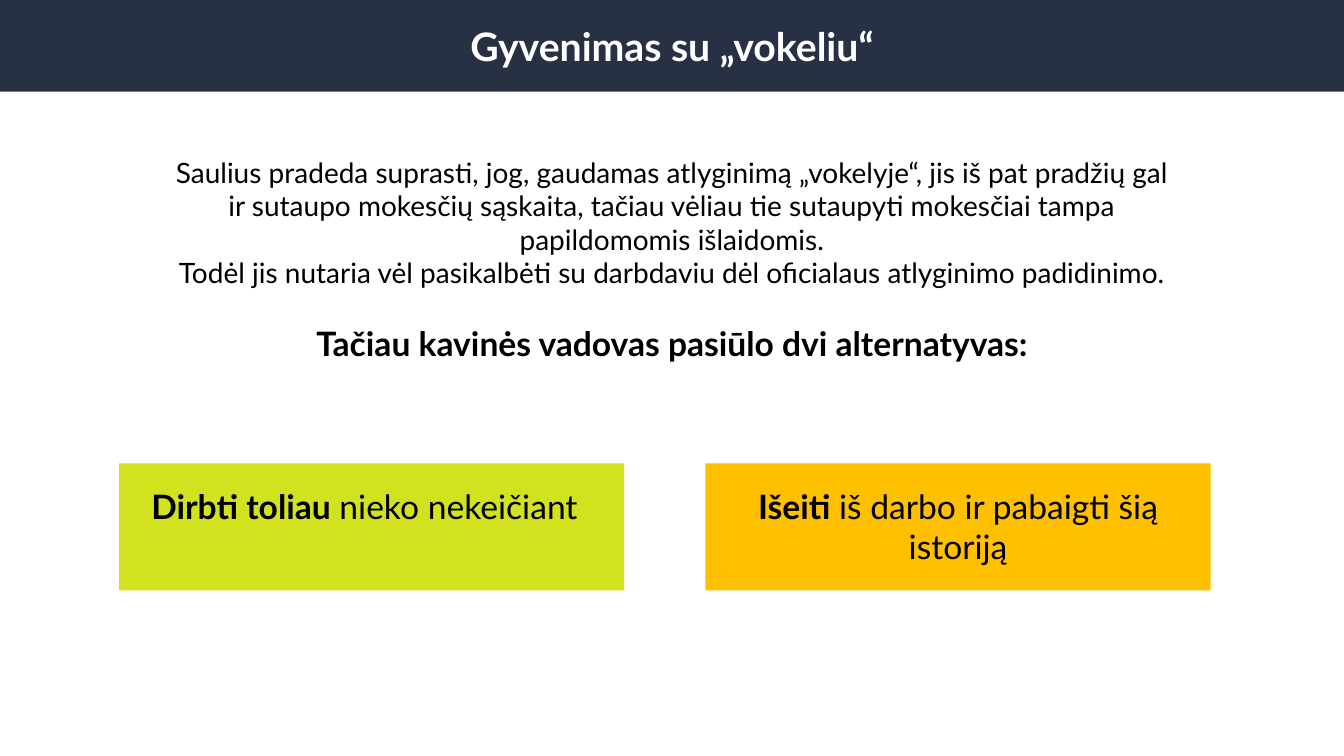
from pptx import Presentation
from pptx.dml.color import RGBColor
from pptx.enum import shapes, text
from pptx.oxml.ns import qn
from pptx.util import Cm, Pt

FONT = "Lato"
COLORS = {
    "band": "283044", "title": "FFFFFF", "text": "000000",
    "stay": "D2E21F", "leave": "FFC000",
}

TITLE = "Gyvenimas su „vokeliu“"
# text, size, bold, space before
STORY = [
    ("Saulius pradeda suprasti, jog, gaudamas atlyginimą „vokelyje“, "
     "jis iš pat pradžių gal ir sutaupo mokesčių sąskaita, tačiau vėliau "
     "tie sutaupyti mokesčiai tampa papildomomis išlaidomis.", 20, False, 0),
    ("Todėl jis nutaria vėl pasikalbėti su darbdaviu dėl oficialaus "
     "atlyginimo padidinimo.", 20, False, 0),
    ("Tačiau kavinės vadovas pasiūlo dvi alternatyvas:", 24, True, 24),
]
# colour, bold part, plain part, left and right margin in cm
OPTIONS = [
    ("stay", "Dirbti toliau", " nieko nekeičiant", 0.61, 0.97),
    ("leave", "Išeiti", " iš darbo ir pabaigti šią istoriją", 0.79, 0.79),
]

SLIDE_WIDTH, SLIDE_HEIGHT = 33.87, 19.05
BAND_HEIGHT = 2.31
STORY_BOX = (3.89, 3.78, 26.09, 6.4)
OPTION_LEFT, OPTION_TOP, OPTION_STEP = 3, 11.68, 14.78
OPTION_WIDTH, OPTION_HEIGHT = 12.73, 3.2


def color(name):
    return RGBColor.from_string(COLORS[name])


def place(shape, left, top, width, height):
    shape.left, shape.top = Cm(left), Cm(top)
    shape.width, shape.height = Cm(width), Cm(height)


def fill(shape, name):
    shape.fill.solid()
    shape.fill.fore_color.rgb = color(name)


def format_paragraph(paragraph, size, color_name="text", bold=None):
    paragraph.alignment = text.PP_ALIGN.CENTER
    font = paragraph.font
    font.name, font.size, font.bold = FONT, Pt(size), bold
    font.color.rgb = color(color_name)


def remove_bullet(paragraph):
    properties = paragraph._p.get_or_add_pPr()
    properties.set("marL", "0")
    properties.set("indent", "0")
    properties.append(properties.makeelement(qn("a:buNone"), {}))


def add_title(slide):
    title = slide.shapes.title
    place(title, 0, 0, SLIDE_WIDTH, BAND_HEIGHT)
    fill(title, "band")
    frame = title.text_frame
    frame.text = TITLE
    frame.auto_size = text.MSO_AUTO_SIZE.NONE
    frame.vertical_anchor = text.MSO_ANCHOR.MIDDLE
    format_paragraph(frame.paragraphs[0], 28, "title", True)


def add_story(slide):
    body = slide.placeholders[1]
    place(body, *STORY_BOX)
    frame = body.text_frame
    frame.text = "\n".join(entry[0] for entry in STORY)
    frame.auto_size = text.MSO_AUTO_SIZE.NONE
    for paragraph, (_, size, bold, before) in zip(frame.paragraphs, STORY):
        paragraph.space_before = Pt(before)
        remove_bullet(paragraph)
        format_paragraph(paragraph, size, bold=bold)


def add_option(slide, index, fill_name, strong, plain, margin_left, margin_right):
    box = slide.shapes.add_shape(
        shapes.MSO_SHAPE.RECTANGLE,
        Cm(OPTION_LEFT + index * OPTION_STEP), Cm(OPTION_TOP),
        Cm(OPTION_WIDTH), Cm(OPTION_HEIGHT))
    box.shadow.inherit = False
    box.line.fill.background()
    fill(box, fill_name)
    frame = box.text_frame
    frame.word_wrap = True
    frame.vertical_anchor = text.MSO_ANCHOR.TOP
    frame.margin_left, frame.margin_right = Cm(margin_left), Cm(margin_right)
    frame.margin_top = Cm(0.56)
    paragraph = frame.paragraphs[0]
    format_paragraph(paragraph, 24)
    for words, bold in ((strong, True), (plain, False)):
        run = paragraph.add_run()
        run.text = words
        run.font.bold = bold


def main():
    presentation = Presentation()
    presentation.slide_width = Cm(SLIDE_WIDTH)
    presentation.slide_height = Cm(SLIDE_HEIGHT)
    slide = presentation.slides.add_slide(presentation.slide_layouts[1])
    add_title(slide)
    add_story(slide)
    for index, option in enumerate(OPTIONS):
        add_option(slide, index, *option)
    presentation.save("out.pptx")


if __name__ == "__main__":
    main()
